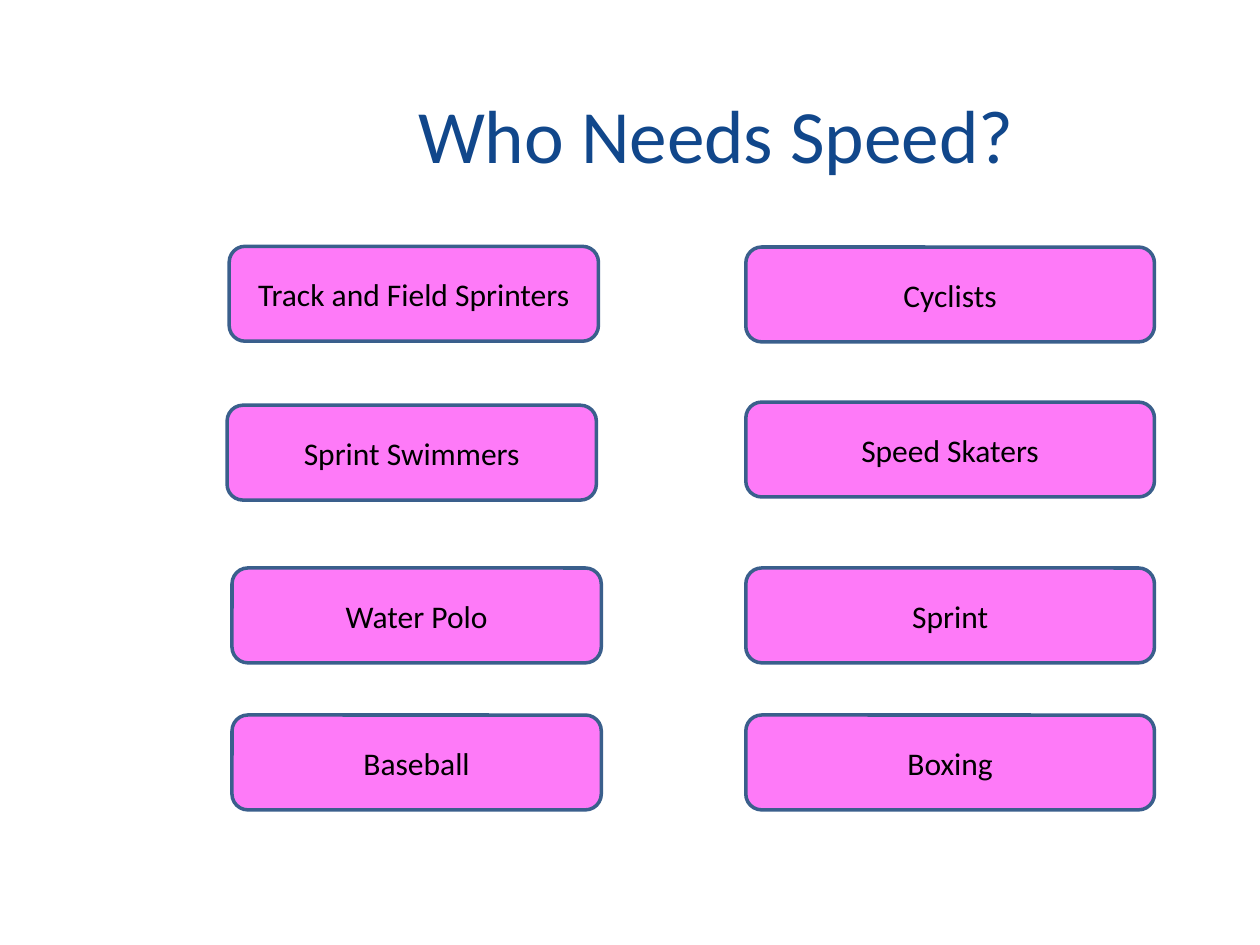
from dataclasses import dataclass

from pptx import Presentation
from pptx.dml.color import RGBColor
from pptx.enum.shapes import MSO_SHAPE
from pptx.enum.text import MSO_ANCHOR, MSO_AUTO_SIZE, PP_ALIGN
from pptx.slide import Slide
from pptx.text.text import TextFrame
from pptx.util import Pt

ROUNDED_RECTANGLE = MSO_SHAPE.ROUNDED_RECTANGLE
MIDDLE = MSO_ANCHOR.MIDDLE
NO_AUTOFIT = MSO_AUTO_SIZE.NONE
CENTER = PP_ALIGN.CENTER

FONT = "Calibri"
PINK, STEEL_BLUE, NAVY, BLACK = "FE7AF8", "3A5F8C", "11478B", "000000"
LEFT_WIDTH, RIGHT_WIDTH = 211, 233.5
RIGHT_COLUMN = 426.2
BOX_HEIGHT = 54.2


@dataclass
class SportBox:
    name: str
    left: float
    top: float
    width: float


SPORT_BOXES = [
    SportBox("Track and Field Sprinters", 131, 140.8, LEFT_WIDTH),
    SportBox("Cyclists", RIGHT_COLUMN, 141.2, RIGHT_WIDTH),
    SportBox("Sprint Swimmers", 129.8, 231.6, LEFT_WIDTH),
    SportBox("Speed Skaters", RIGHT_COLUMN, 229.8, RIGHT_WIDTH),
    SportBox("Water Polo", 132.6, 324.6, LEFT_WIDTH),
    SportBox("Sprint", RIGHT_COLUMN, 324.6, RIGHT_WIDTH),
    SportBox("Baseball", 132.6, 408.6, LEFT_WIDTH),
    SportBox("Boxing", RIGHT_COLUMN, 408.6, RIGHT_WIDTH),
]


def color(hex_value: str) -> RGBColor:
    return RGBColor.from_string(hex_value)


def set_centered_text(frame: TextFrame, text: str, size: float, text_color: str) -> None:
    frame.text = text
    frame.word_wrap = True
    frame.auto_size = NO_AUTOFIT
    frame.vertical_anchor = MIDDLE
    paragraph = frame.paragraphs[0]
    paragraph.alignment = CENTER
    font = paragraph.runs[0].font
    font.name = FONT
    font.size = Pt(size)
    font.color.rgb = color(text_color)


def add_title(slide: Slide, text: str) -> None:
    title = slide.shapes.title
    title.left, title.top = Pt(113.8), Pt(31)
    title.width, title.height = Pt(590.4), Pt(90)
    set_centered_text(title.text_frame, text, 43, NAVY)


def add_sport_box(slide: Slide, box: SportBox) -> None:
    shape = slide.shapes.add_shape(
        ROUNDED_RECTANGLE, Pt(box.left), Pt(box.top), Pt(box.width), Pt(BOX_HEIGHT)
    )
    shape.shadow.inherit = False
    shape.fill.solid()
    shape.fill.fore_color.rgb = color(PINK)
    shape.line.color.rgb = color(STEEL_BLUE)
    shape.line.width = Pt(2)
    set_centered_text(shape.text_frame, box.name, 18, BLACK)


def main() -> None:
    presentation = Presentation()
    presentation.slide_width, presentation.slide_height = Pt(720), Pt(540)
    title_only_layout = presentation.slide_layouts[5]
    slide = presentation.slides.add_slide(title_only_layout)
    add_title(slide, "Who Needs Speed?")
    for box in SPORT_BOXES:
        add_sport_box(slide, box)
    presentation.save("out.pptx")


if __name__ == "__main__":
    main()
